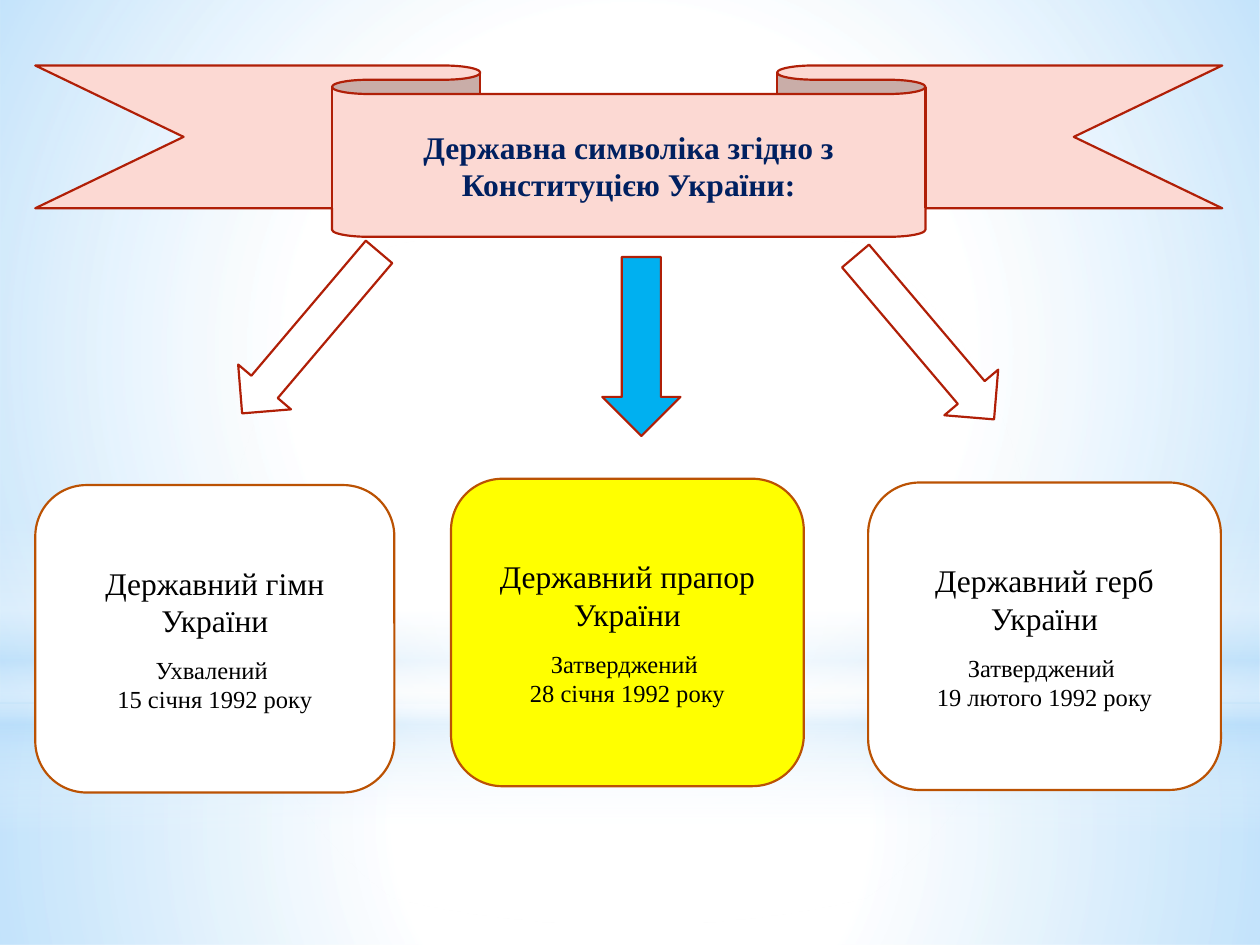
from pptx import Presentation
from pptx.dml.color import RGBColor
from pptx.enum.shapes import MSO_SHAPE as Preset
from pptx.enum.text import MSO_ANCHOR as Anchor, PP_ALIGN as Align
from pptx.oxml import parse_xml
from pptx.oxml.ns import nsdecls, qn
from pptx.util import Inches, Pt

FONT = "Times New Roman"
RED, BROWN, WHITE, SKY = "B01F07", "BB5203", "FFFFFF", "B4DCFA"
RADIAL = ('<a:path path="circle"><a:fillToRect l="50000" t="50000" '
          'r="50000" b="50000"/></a:path>')
VERTICAL = '<a:lin ang="5400000" scaled="0"/>'


def paint(target, colour):
    target.solid()
    target.fore_color.rgb = RGBColor.from_string(colour)


def add_preset(page, preset, box):
    shape = page.shapes.add_shape(preset, *(Inches(length) for length in box))
    shape.shadow.inherit = False
    return shape


def add_outlined(page, preset, box, fill, line):
    shape = add_preset(page, preset, box)
    paint(shape.fill, fill)
    paint(shape.line.fill, line)
    shape.line.width = Pt(1.25)
    return shape


def add_glow(page, preset, box, stops, direction):
    shape = add_preset(page, preset, box)
    shape.line.fill.background()
    stop_xml = "".join(
        f'<a:gs pos="{position * 1000}"><a:srgbClr val="{colour}">'
        f'<a:alpha val="{opacity * 1000}"/></a:srgbClr></a:gs>'
        for position, colour, opacity in stops)
    gradient = parse_xml(
        f'<a:gradFill {nsdecls("a")} rotWithShape="1">'
        f'<a:gsLst>{stop_xml}</a:gsLst>{direction}</a:gradFill>')
    shape._element.spPr.find(qn("a:prstGeom")).addnext(gradient)


def add_text(para, text, size, colour, bold=False):
    para.alignment = Align.CENTER
    span = para.add_run()
    span.text = text
    span.font.name = FONT
    span.font.size = Pt(size)
    span.font.bold = bold
    paint(span.font.fill, colour)


def add_background(page, width, height):
    horizon = 5.58
    add_glow(page, Preset.RECTANGLE, (0, horizon, width, height - horizon),
             [(0, WHITE, 91), (37, WHITE, 76), (100, SKY, 79)], RADIAL)
    add_glow(page, Preset.RECTANGLE, (0, 0, width, horizon),
             [(0, WHITE, 89), (48, WHITE, 62), (100, SKY, 79)], RADIAL)
    add_glow(page, Preset.RECTANGLE, (0, 4.12, width, 2.5),
             [(0, WHITE, 0), (29, WHITE, 30), (45, SKY, 40),
              (55, WHITE, 26), (65, SKY, 60), (100, WHITE, 0)], VERTICAL)
    add_glow(page, Preset.OVAL, (0, 1.75, width, horizon),
             [(0, WHITE, 100), (56, WHITE, 0)], RADIAL)


def add_banner(page, box, text):
    ribbon = add_outlined(page, Preset.DOWN_RIBBON, box, "FCD9D3", RED)
    frame = ribbon.text_frame
    frame.word_wrap = True
    frame.vertical_anchor = Anchor.MIDDLE
    add_text(frame.paragraphs[0], text, 18, "002060", bold=True)


def add_card(page, box, fill, symbol, status, date):
    card = add_outlined(page, Preset.ROUNDED_RECTANGLE, box, fill, BROWN)
    frame = card.text_frame
    frame.word_wrap = True
    frame.vertical_anchor = Anchor.MIDDLE
    add_text(frame.paragraphs[0], symbol, 18, "000000")
    status_para = frame.add_paragraph()
    status_para.space_before = Pt(9)
    add_text(status_para, status, 14, "000000")
    add_text(frame.add_paragraph(), date, 14, "000000")


def add_arrow(page, box, fill, rotation):
    arrow = add_outlined(page, Preset.DOWN_ARROW, box, fill, RED)
    arrow.rotation = rotation


def main():
    deck = Presentation()
    deck.slide_width, deck.slide_height = Inches(10), Inches(7.5)
    page = deck.slides.add_slide(deck.slide_layouts[6])
    add_background(page, 10, 7.5)
    add_banner(page, (0.28, 0.52, 9.42, 1.36),
               "Державна символіка згідно з Конституцією України:")
    cards = [
        ((0.28, 3.85, 2.85, 2.44), WHITE, "Державний гімн України",
         "Ухвалений ", "15 січня 1992 року"),
        ((3.58, 3.8, 2.8, 2.44), "FFFF00", "Державний прапор України",
         "Затверджений ", "28 січня 1992 року"),
        ((6.89, 3.83, 2.8, 2.44), WHITE, "Державний герб України",
         "Затверджений ", "19 лютого 1992 року"),
    ]
    for card in cards:
        add_card(page, *card)
    arrows = [
        ((2.19, 1.8, 0.55, 1.68), WHITE, 40.3),
        ((4.78, 2.04, 0.62, 1.42), "00B0F0", 0),
        ((7.06, 1.83, 0.56, 1.7), WHITE, 319.7),
    ]
    for arrow in arrows:
        add_arrow(page, *arrow)
    deck.save("out.pptx")


if __name__ == "__main__":
    main()
